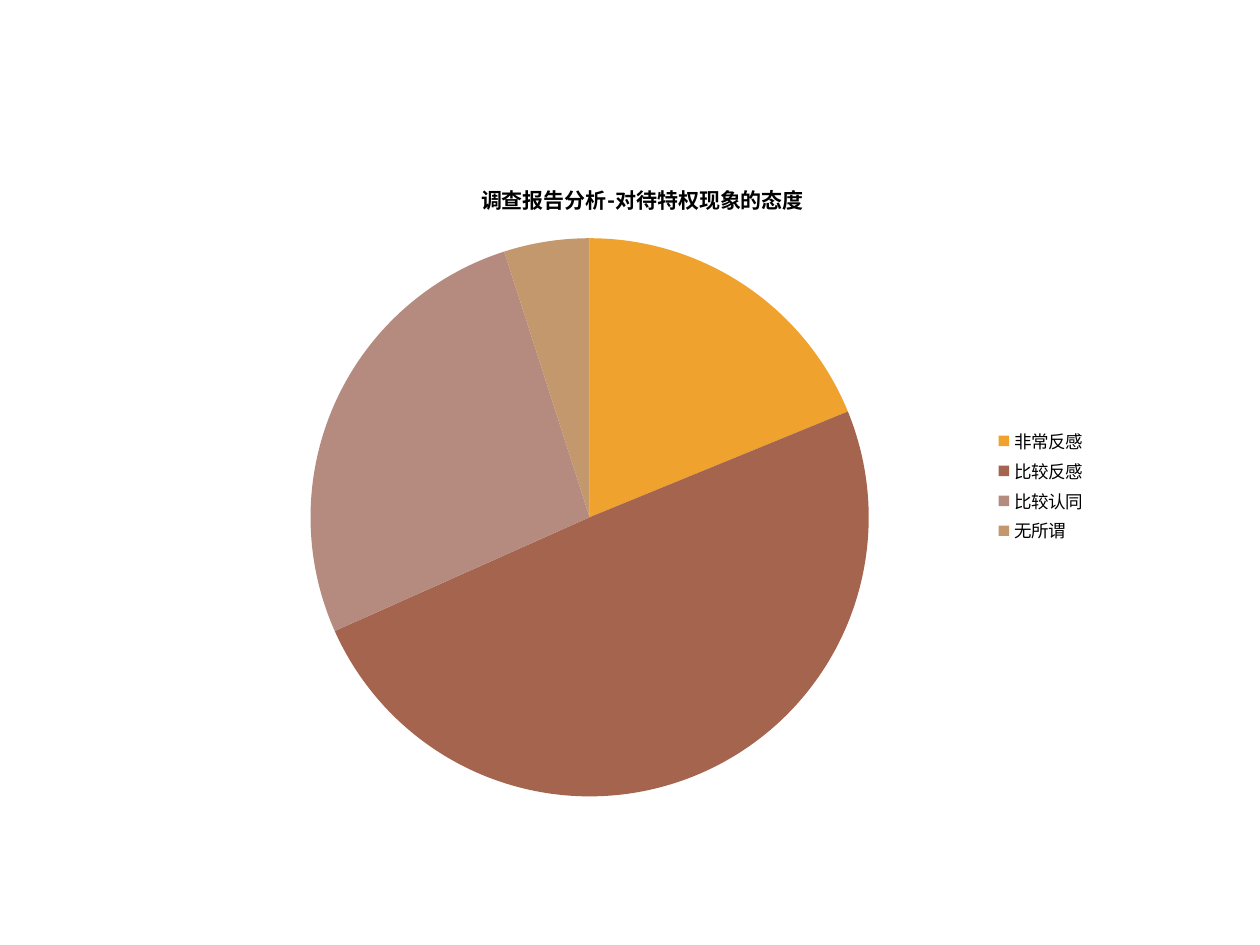
from lxml import etree
from pptx import Presentation
from pptx import util as u
from pptx.chart.data import CategoryChartData
from pptx.dml.color import RGBColor
from pptx.enum import chart as ch
from pptx.oxml.ns import qn

TOPIC = "调查报告分析-对待特权现象的态度"
ATTITUDES = [
    ("非常反感", 19, "F0A22E"),
    ("比较反感", 50, "A5644E"),
    ("比较认同", 27, "B58B80"),
    ("无所谓", 5, "C3986D"),
]


def colour(hex_code):
    return RGBColor.from_string(hex_code)


def place_plot(chart, x, y, w, h):
    """Fix the inner plot area, in shares of the chart's size."""
    plot_area = chart.element.find(".//" + qn("c:plotArea"))
    layout = plot_area.find(qn("c:layout"))
    if layout is None:
        layout = etree.Element(qn("c:layout"))
        plot_area.insert(0, layout)
    manual = etree.SubElement(layout, qn("c:manualLayout"))
    settings = {"layoutTarget": "inner", "xMode": "edge", "yMode": "edge",
                "x": x, "y": y, "w": w, "h": h}
    for tag, value in settings.items():
        etree.SubElement(manual, qn("c:" + tag)).set("val", str(value))


class Deck:
    font = "Roboto"
    ink = "000000"
    body_size, title_size = 10, 12

    def __init__(self, width, height):
        self.prs = Presentation()
        self.prs.slide_width, self.prs.slide_height = u.Inches(width), u.Inches(height)
        self.slide = self.prs.slides.add_slide(self.prs.slide_layouts[6])

    def box(self, x, y, w, h):
        """Turn shares of the slide's size into lengths."""
        width, height = self.prs.slide_width, self.prs.slide_height
        return int(x * width), int(y * height), int(w * width), int(h * height)

    def style(self, font, size, bold=False):
        font.name, font.size, font.bold = self.font, u.Pt(size), bold
        font.color.rgb = colour(self.ink)

    def pie(self, title, slices, area, plot):
        names, values, fills = zip(*slices)
        data = CategoryChartData()
        data.categories = names
        data.add_series(title, values)
        chart = self.slide.shapes.add_chart(
            ch.XL_CHART_TYPE.PIE, *self.box(*area), data).chart
        self.style(chart.font, self.body_size)

        chart.has_title = True
        heading = chart.chart_title.text_frame
        heading.text = title
        self.style(heading.paragraphs[0].font, self.title_size, bold=True)
        for overlay in chart.element.findall(f".//{qn('c:title')}/{qn('c:overlay')}"):
            overlay.set("val", "1")

        chart.has_legend = True
        chart.legend.position = ch.XL_LEGEND_POSITION.RIGHT
        chart.legend.include_in_layout = True
        self.style(chart.legend.font, self.body_size)

        pie = chart.plots[0]
        pie.vary_by_categories = True
        for index, fill_hex in enumerate(fills):
            form = pie.series[0].points[index].format
            form.fill.solid()
            form.fill.fore_color.rgb = colour(fill_hex)
            form.line.fill.background()
        place_plot(chart, *plot)


def main():
    deck = Deck(10, 7.5)
    deck.pie(TOPIC, ATTITUDES,
             area=(0.148, 1 / 6, 0.724, 0.695),
             plot=(0.136, 0.123, 0.612, 0.85))
    deck.prs.save("out.pptx")


if __name__ == "__main__":
    main()
